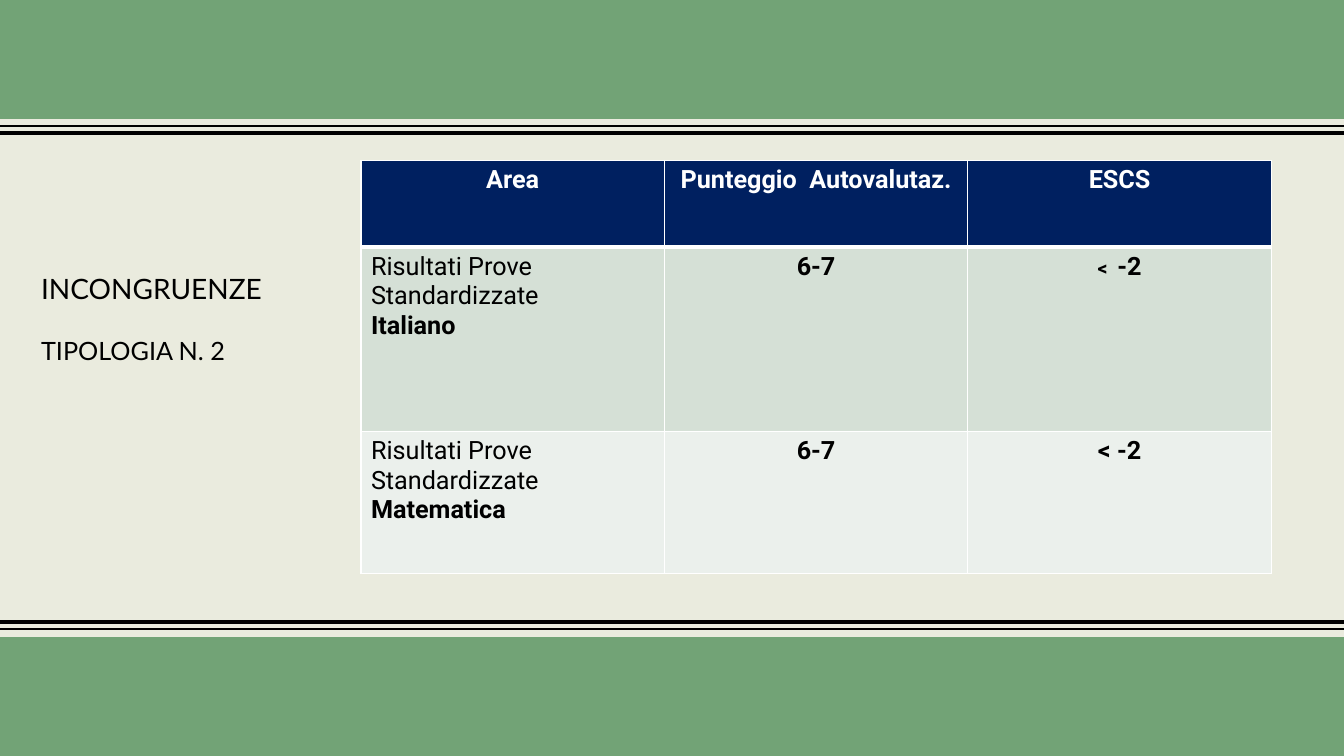
from dataclasses import dataclass

from lxml import etree
from pptx import Presentation
from pptx.dml.color import RGBColor
from pptx.enum.shapes import MSO_CONNECTOR as Connector, MSO_SHAPE as Shape
from pptx.enum.text import PP_ALIGN as Align
from pptx.oxml.ns import qn
from pptx.util import Inches, Pt


@dataclass(frozen=True)
class Theme:
    background: str = "EAEBDE"
    band: str = "72A376"
    ink: str = "000000"
    white: str = "FFFFFF"
    header: str = "002060"
    rows: tuple = ("D5E0D6", "EBF0EC")
    title_font: str = "Lato"
    table_font: str = "Roboto"
    title_size: int = 20
    body_size: int = 18
    small_size: int = 14
    thin: int = 1
    thick: int = 3


THEME = Theme()
WIDTH, HEIGHT = 13.33, 7.5
COLUMN_WIDTH = 3.01
ROW_HEIGHTS = (0.86, 1.83, 1.41)
HEADINGS = ("Area", "Punteggio  Autovalutaz.", "ESCS")
RESULTS = (("Italiano", "6-7", (("<  ", THEME.small_size), ("-2", THEME.body_size))),
           ("Matematica", "6-7", (("< -2", THEME.body_size),)))


def rgb(value):
    return RGBColor.from_string(value)


def paint(fill, color):
    fill.solid()
    fill.fore_color.rgb = rgb(color)


def add_run(paragraph, text, color, **formats):
    run = paragraph.add_run()
    run.text = text
    run.font.color.rgb = rgb(color)
    for name, value in formats.items():
        setattr(run.font, name, value)


def add_band(slide, left, top, width, height):
    band = slide.shapes.add_shape(Shape.RECTANGLE, Inches(left), Inches(top),
                                  Inches(width), Inches(height))
    band.shadow.inherit = False
    paint(band.fill, THEME.band)
    band.line.fill.background()


def add_rule(slide, left, top, width, weight):
    rule = slide.shapes.add_connector(Connector.STRAIGHT, Inches(left), Inches(top),
                                      Inches(left + width), Inches(top))
    rule.line.color.rgb = rgb(THEME.ink)
    rule.line.width = Pt(weight)
    properties = rule._element.find(qn("p:spPr"))
    etree.SubElement(properties, qn("a:effectLst"))


def add_frame(slide, left, top, width, height):
    band_height = 1.18
    bottom = top + height
    for offset, weight in ((1.32, THEME.thick), (1.25, THEME.thin)):
        for rule_top in (top + offset, bottom - offset - 0.01):
            add_rule(slide, left, rule_top, width, weight)
    for band_top in (top, bottom - band_height):
        add_band(slide, left, band_top, width, band_height)


def add_title(slide, left, top, width, height):
    box = slide.shapes.add_textbox(Inches(left), Inches(top), Inches(width), Inches(height))
    frame = box.text_frame
    frame.word_wrap = True
    heading = frame.paragraphs[0]
    add_run(heading, "INCONGRUENZE", THEME.ink, name=THEME.title_font,
            size=Pt(THEME.title_size))
    subheading = frame.add_paragraph()
    subheading.space_before = Pt(22)
    add_run(subheading, "TIPOLOGIA N. 2", THEME.ink, name=THEME.title_font,
            size=Pt(THEME.body_size))


def set_borders(cell, **weights):
    properties = cell._tc.get_or_add_tcPr()
    for position, side in enumerate("LRTB"):
        border = etree.Element(qn(f"a:ln{side}"), w=str(Pt(weights.get(side, THEME.thin))))
        fill = etree.SubElement(border, qn("a:solidFill"))
        etree.SubElement(fill, qn("a:srgbClr"), val=THEME.white)
        properties.insert(position, border)


def fill_cell(cell, paragraphs, color, background, align, **weights):
    paint(cell.fill, background)
    set_borders(cell, **weights)
    frame = cell.text_frame
    for index, runs in enumerate(paragraphs):
        paragraph = frame.add_paragraph() if index else frame.paragraphs[0]
        paragraph.alignment = align
        for text, size, bold in runs:
            add_run(paragraph, text, color, name=THEME.table_font, size=Pt(size), bold=bold)


def add_results_table(slide, left, top, width, height):
    table = slide.shapes.add_table(len(ROW_HEIGHTS), len(HEADINGS), Inches(left), Inches(top),
                                   Inches(width), Inches(height)).table
    for column in table.columns:
        column.width = Inches(COLUMN_WIDTH)
    for row, row_height in zip(table.rows, ROW_HEIGHTS):
        row.height = Inches(row_height)
    size = THEME.body_size
    for column, heading in enumerate(HEADINGS):
        fill_cell(table.cell(0, column), [[(heading, size, True)]], THEME.white,
                  THEME.header, Align.CENTER, B=THEME.thick)
    for row, (subject, score, escs) in enumerate(RESULTS, start=1):
        contents = (
            [[("Risultati Prove Standardizzate", size, False)], [(subject, size, True)]],
            [[(score, size, True)]],
            [[(text, run_size, True) for text, run_size in escs]],
        )
        for column, paragraphs in enumerate(contents):
            fill_cell(table.cell(row, column), paragraphs, THEME.ink, THEME.rows[row - 1],
                      Align.CENTER if column else Align.LEFT,
                      T=THEME.thick if row == 1 else THEME.thin)


def main():
    presentation = Presentation()
    presentation.slide_width = Inches(WIDTH)
    presentation.slide_height = Inches(HEIGHT)
    slide = presentation.slides.add_slide(presentation.slide_layouts[6])
    paint(slide.background.fill, THEME.background)
    add_frame(slide, 0, 0, WIDTH, HEIGHT)
    add_results_table(slide, 3.58, 1.59, COLUMN_WIDTH * len(HEADINGS), sum(ROW_HEIGHTS))
    add_title(slide, 0.31, 2.64, 2.73, 1.04)
    presentation.save("out.pptx")


if __name__ == "__main__":
    main()
